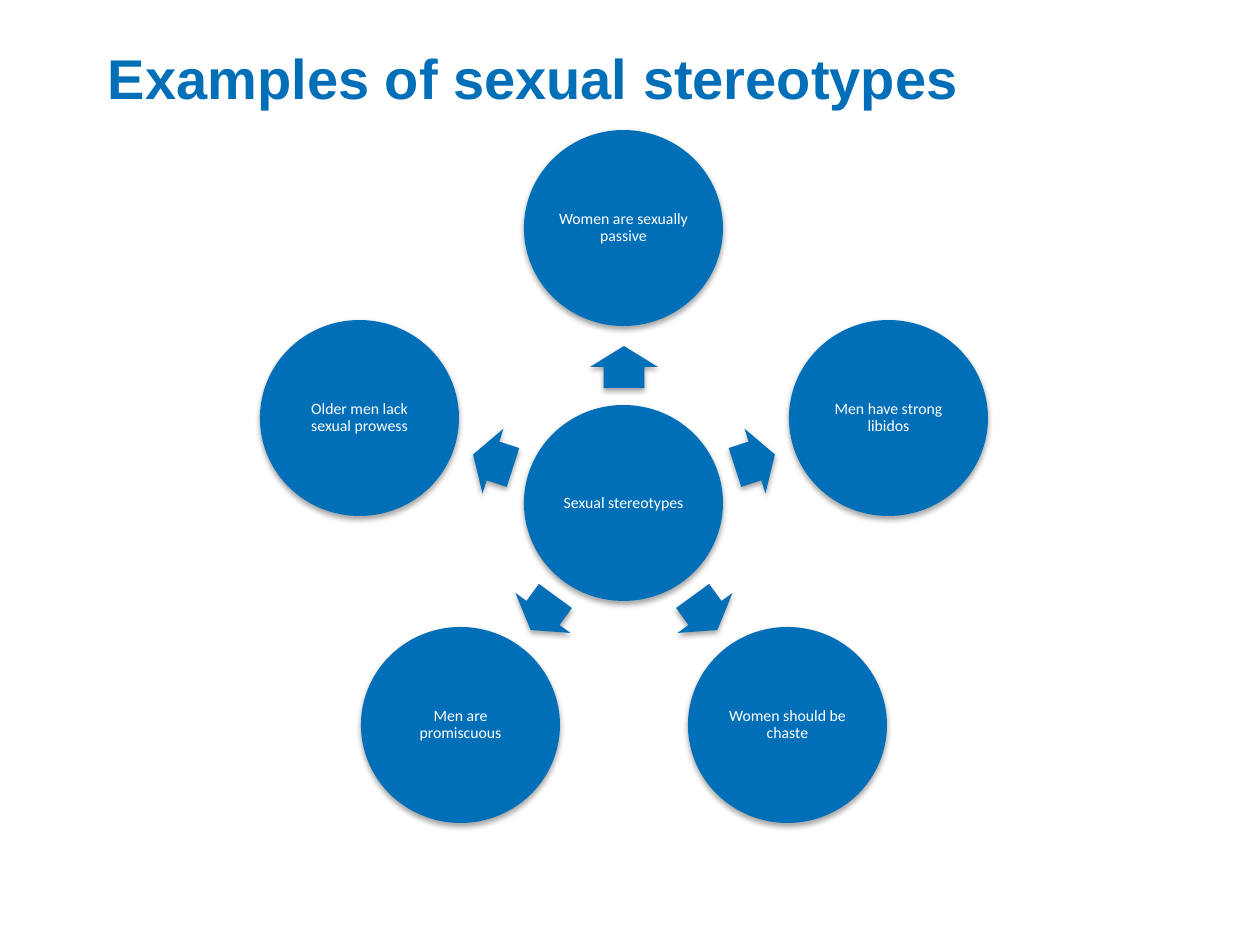
from math import cos, radians, sin

from lxml import etree
from pptx import Presentation
from pptx.dml.color import RGBColor
from pptx.enum.shapes import MSO_SHAPE
from pptx.enum.text import MSO_ANCHOR, PP_ALIGN
from pptx.oxml.ns import qn
from pptx.util import Pt

TITLE = "Examples of sexual stereotypes"
HUB = "Sexual stereotypes"
EXAMPLES = [
    "Women are sexually passive",
    "Men have strong libidos",
    "Women should be chaste",
    "Men are promiscuous",
    "Older men lack sexual prowess",
]
BLUE, WHITE, BLACK = "006FB7", "FFFFFF", "000000"
CIRCLE, ARROW = MSO_SHAPE.OVAL, MSO_SHAPE.UP_ARROW

PX = 914400 // 126
SLIDE_SIZE = (1260, 945)
TITLE_BOX = (102, 38, 1042, 150)
CENTER = (624, 503)
CIRCLE_SIZE = (199, 196)
ARROW_SIZE = (68, 42)
CIRCLE_ORBIT = (278, 275)
ARROW_ORBIT = (138, 136)


def color(hex_code):
    return RGBColor.from_string(hex_code)


def orbit_point(orbit, angle):
    """Point on an ellipse around the hub, clockwise from the top."""
    turn = radians(angle)
    return (CENTER[0] + orbit[0] * sin(turn), CENTER[1] - orbit[1] * cos(turn))


def add_soft_shadow(shape):
    shape.shadow.inherit = False
    effects = shape._element.spPr.find(qn("a:effectLst"))
    shadow = etree.SubElement(effects, qn("a:outerShdw"), blurRad=str(Pt(3)),
                              dist=str(Pt(1.8)), dir="5400000", rotWithShape="0")
    shade = etree.SubElement(shadow, qn("a:srgbClr"), val=BLACK)
    etree.SubElement(shade, qn("a:alpha"), val="35000")


def add_blue_shape(slide, kind, center, size):
    left, top = (round(middle - length / 2) for middle, length in zip(center, size))
    shape = slide.shapes.add_shape(kind, left * PX, top * PX, size[0] * PX, size[1] * PX)
    shape.fill.solid()
    shape.fill.fore_color.rgb = color(BLUE)
    shape.line.fill.background()
    add_soft_shadow(shape)
    return shape


def write(frame, text, font_name, size, hex_code, margin):
    frame.word_wrap = True
    frame.margin_left = frame.margin_right = margin * PX
    frame.margin_top = frame.margin_bottom = margin * PX
    frame.text = text
    font = frame.paragraphs[0].runs[0].font
    font.name, font.size = font_name, Pt(size)
    font.color.rgb = color(hex_code)
    return font


def add_circle(slide, text, center):
    frame = add_blue_shape(slide, CIRCLE, center, CIRCLE_SIZE).text_frame
    write(frame, text, "Calibri", 9, WHITE, margin=1)
    frame.vertical_anchor = MSO_ANCHOR.MIDDLE
    frame.paragraphs[0].alignment = PP_ALIGN.CENTER
    frame.paragraphs[0].line_spacing = 0.9


def add_arrow(slide, angle):
    arrow = add_blue_shape(slide, ARROW, orbit_point(ARROW_ORBIT, angle), ARROW_SIZE)
    arrow.adjustments[0] = 0.6
    arrow.adjustments[1] = 0.5
    arrow.rotation = angle


def main():
    deck = Presentation()
    deck.slide_width, deck.slide_height = (length * PX for length in SLIDE_SIZE)
    slide = deck.slides.add_slide(deck.slide_layouts[6])

    title = slide.shapes.add_textbox(*(length * PX for length in TITLE_BOX))
    write(title.text_frame, TITLE, "Arial", 32, BLUE, margin=6).bold = True

    add_circle(slide, HUB, CENTER)
    for index, example in enumerate(EXAMPLES):
        angle = index * 360 / len(EXAMPLES)
        add_arrow(slide, angle)
        add_circle(slide, example, orbit_point(CIRCLE_ORBIT, angle))

    deck.save("out.pptx")


if __name__ == "__main__":
    main()
